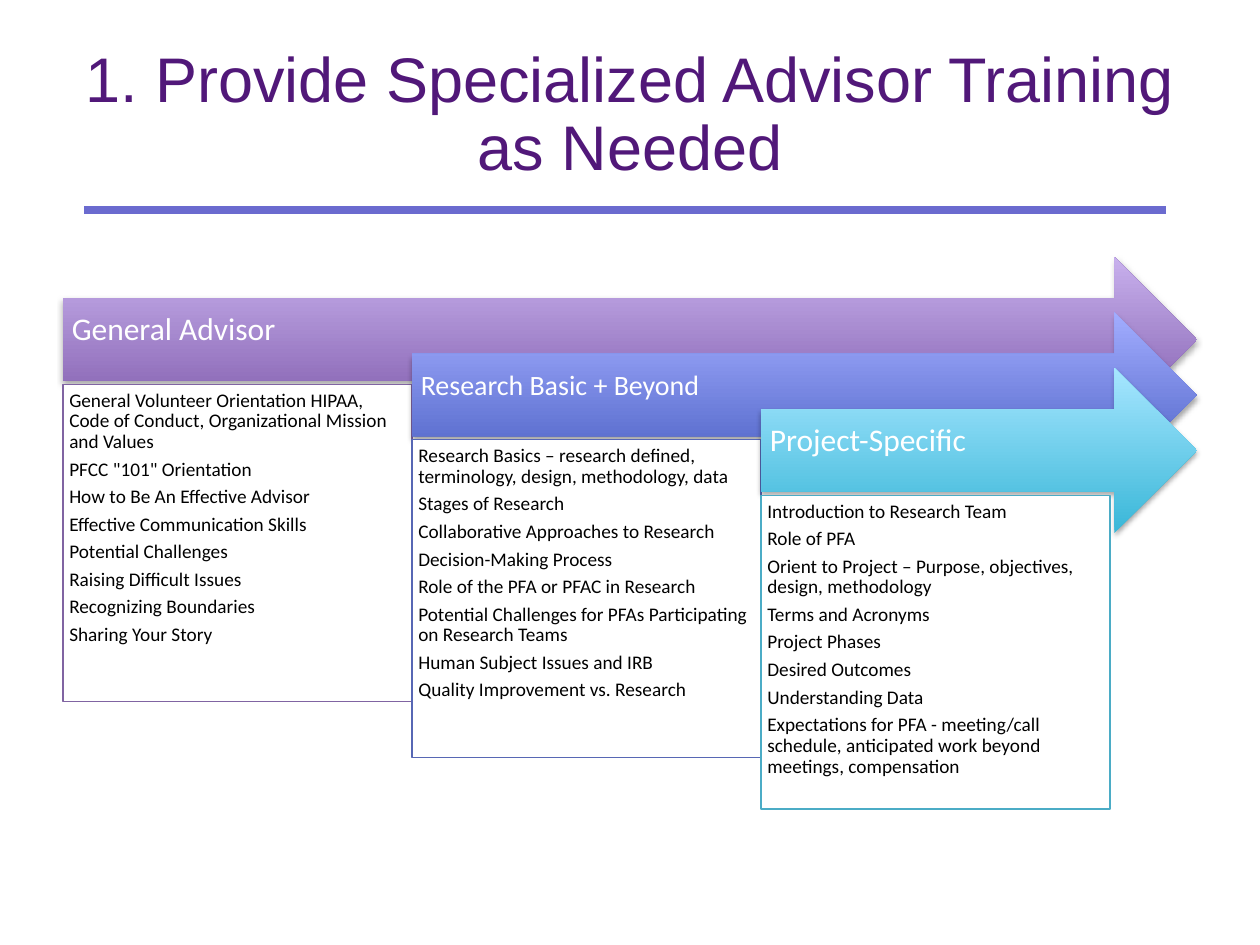
from lxml import etree
from pptx import Presentation
from pptx.dml.color import RGBColor
from pptx.enum.shapes import MSO_CONNECTOR, MSO_SHAPE
from pptx.enum.text import MSO_ANCHOR, PP_ALIGN
from pptx.oxml import parse_xml
from pptx.oxml.ns import nsdecls, qn
from pptx.util import Inches, Pt

ARROW, RECT = MSO_SHAPE.RIGHT_ARROW, MSO_SHAPE.RECTANGLE
LINE = MSO_CONNECTOR.STRAIGHT
TOP, MID = MSO_ANCHOR.TOP, MSO_ANCHOR.MIDDLE
LEFT, CENTER = PP_ALIGN.LEFT, PP_ALIGN.CENTER

# Content
TITLE = "1. Provide Specialized Advisor Training as Needed"
STAGES = [
    dict(name="General Advisor", size=18, dark="7F5BAB", light="C8B0ED",
         edge="8064A2", deep=2.52, items=[
             "General Volunteer Orientation HIPAA, Code of Conduct, "
             "Organizational Mission and Values",
             'PFCC "101" Orientation',
             "How to Be An Effective Advisor",
             "Effective Communication Skills",
             "Potential Challenges",
             "Raising Difficult Issues",
             "Recognizing Boundaries",
             "Sharing Your Story"]),
    dict(name="Research Basic + Beyond", size=16, dark="495EC2", light="A2ADFF",
         edge="5767B4", deep=2.52, items=[
             "Research Basics – research defined, terminology, design, "
             "methodology, data",
             "Stages of Research",
             "Collaborative Approaches to Research",
             "Decision-Making Process",
             "Role of the PFA or PFAC in Research",
             "Potential Challenges for PFAs Participating on Research Teams",
             "Human Subject Issues and IRB",
             "Quality Improvement vs. Research"]),
    dict(name="Project-Specific", size=18, dark="39B7D8", light="A7E6FF",
         edge="4BACC6", deep=2.49, items=[
             "Introduction to Research Team",
             "Role of PFA",
             "Orient to Project – Purpose, objectives, design, methodology",
             "Terms and Acronyms",
             "Project Phases",
             "Desired Outcomes",
             "Understanding Data",
             "Expectations for PFA - meeting/call schedule, anticipated work "
             "beyond meetings, compensation"]),
]

# Stair of arrows, in inches
X0, Y0, RIGHT = 0.5, 2.04, 9.5
COL, STEP = 2.77, 0.44
TALL, DROP = 1.31, 1.01

prs = Presentation()
prs.slide_width, prs.slide_height = Inches(10), Inches(7.5)
slide = prs.slides.add_slide(prs.slide_layouts[6])


def color(code):
    return RGBColor.from_string(code)


def write(shape, lines, size, ink, font="Calibri", align=LEFT, anchor=TOP,
          pad=(0.05,) * 4, after=0):
    frame = shape.text_frame
    frame.word_wrap = True
    frame.vertical_anchor = anchor
    (frame.margin_left, frame.margin_top,
     frame.margin_right, frame.margin_bottom) = map(Inches, pad)
    for i, line in enumerate(lines):
        para = frame.add_paragraph() if i else frame.paragraphs[0]
        para.text = line
        para.alignment = align
        para.line_spacing = 0.9
        para.space_after = Pt(after)
        para.font.name, para.font.size = font, Pt(size)
        para.font.color.rgb = color(ink)


def add(kind, x, y, w, h):
    shape = slide.shapes.add_shape(kind, *map(Inches, (x, y, w, h)))
    shape.shadow.inherit = False
    return shape


def shade(shape):
    effects = shape._element.spPr.find(qn("a:effectLst"))
    effects.append(parse_xml(
        f'<a:outerShdw {nsdecls("a")} blurRad="{Pt(3.1)}" dist="{Pt(1.8)}" '
        'dir="5400000" rotWithShape="0"><a:srgbClr val="000000">'
        '<a:alpha val="35000"/></a:srgbClr></a:outerShdw>'))


# Title and rule
title = slide.shapes.add_textbox(*map(Inches, (0.5, 0.33, 9, 1.25)))
write(title, [TITLE], 36, "511879", font="Arial", align=CENTER,
      pad=(0.1, 0.05, 0.1, 0.05))
rule = slide.shapes.add_connector(LINE, *map(Inches, (0.67, 1.67, 9.25, 1.67)))
rule.line.color.rgb = color("6B6BCF")
rule.line.width = Pt(4.5)
etree.SubElement(rule._element.spPr, qn("a:effectLst"))

# Each stage: an arrow with its heading, and a list below it
for i, stage in enumerate(STAGES):
    x, y = X0 + i * COL, Y0 + i * STEP
    arrow = add(ARROW, x, y, RIGHT - x, TALL)
    arrow.fill.gradient()
    arrow.fill.gradient_angle = 90
    for stop, code in zip(arrow.fill.gradient_stops,
                          (stage["dark"], stage["light"])):
        stop.color.rgb = color(code)
    arrow.line.fill.background()
    shade(arrow)
    write(arrow, [stage["name"]], stage["size"], "FFFFFF", anchor=MID,
          pad=(0.07, 0.07, 0.28, 0.21))

    box = add(RECT, x, y + DROP, COL, stage["deep"])
    box.fill.solid()
    box.fill.fore_color.rgb = color("FFFFFF")
    box.line.color.rgb = color(stage["edge"])
    box.line.width = Pt(0.75)
    write(box, stage["items"], 11, "000000", after=3.85)

prs.save("out.pptx")
